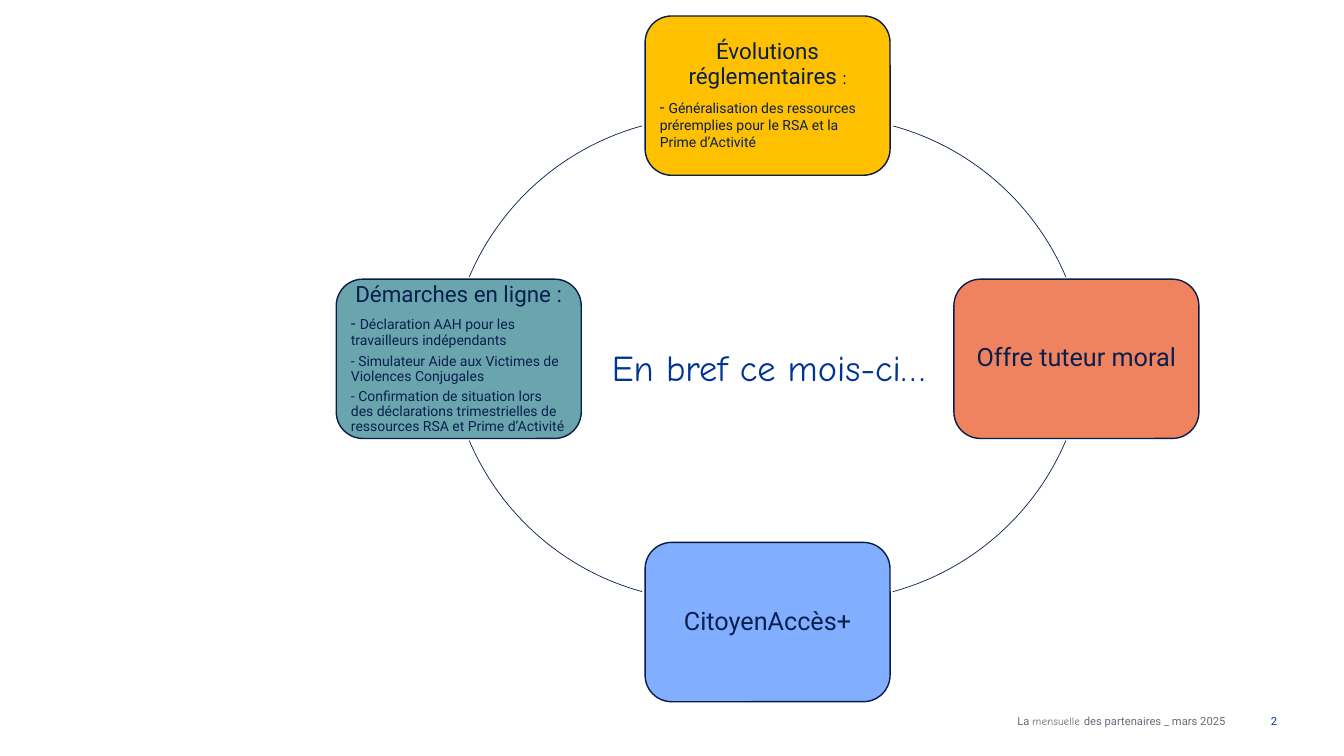
from lxml.etree import SubElement
from pptx import Presentation
from pptx.dml.color import RGBColor
from pptx.enum.shapes import MSO_SHAPE as Shape
from pptx.enum.text import MSO_ANCHOR as Anchor, MSO_AUTO_SIZE as AutoSize, PP_ALIGN as Align
from pptx.oxml.ns import qn
from pptx.util import Pt

COLORS = {
    "ink": "09204E", "border": "081D47", "title": "003593", "number": "013593",
    "footer": "646D77", "yellow": "FFC000", "orange": "E94F1C",
    "blue": "82AEFF", "teal": "2B808D",
}
BODY, ACCENT = "Roboto", "Comic Neue"

CX, CY = 548.3, 256.3            # centre of the cycle
NODE_W, NODE_H = 175, 113.8
STEP_X, STEP_Y = 220.6, 188      # centre of the cycle to centre of a node
ARC_D, ARC_DX, ARC_DY = 376, 40, 15
ARC_START, ARC_END = 23, 74.7    # degrees, in the lower right quarter


class SlideBuilder:
    def __init__(self, prs):
        self.slide = prs.slides.add_slide(prs.slide_layouts[5])

    def color(self, name):
        return RGBColor.from_string(COLORS[name])

    def frame(self, sp, anchor, margin=None):
        tf = sp.text_frame
        tf.word_wrap = True
        tf.auto_size = AutoSize.NONE
        tf.vertical_anchor = anchor
        if margin is not None:
            tf.margin_left = tf.margin_right = Pt(margin)
            tf.margin_top = tf.margin_bottom = Pt(margin)
        return tf

    def paragraph(self, p, runs, color, align, spacing=1.0, after=0):
        """Fill a paragraph from (text, size, font) runs."""
        p.alignment = align
        p.line_spacing = spacing
        p.space_before = Pt(0)
        p.space_after = Pt(after)
        for text, size, font in runs:
            r = p.add_run()
            r.text = text
            r.font.size = Pt(size)
            r.font.name = font
            r.font.color.rgb = self.color(color)

    def title(self, text, x, y, w, h):
        sp = self.slide.shapes.title
        sp.left, sp.top, sp.width, sp.height = Pt(x), Pt(y), Pt(w), Pt(h)
        tf = self.frame(sp, Anchor.BOTTOM)
        self.paragraph(tf.paragraphs[0], [(text, 26, ACCENT)], "title", Align.LEFT, 0.9)

    def label(self, runs, color, x, y, w, h):
        sp = self.slide.shapes.add_textbox(Pt(x), Pt(y), Pt(w), Pt(h))
        tf = self.frame(sp, Anchor.MIDDLE)
        self.paragraph(tf.paragraphs[0], runs, color, Align.RIGHT)

    def node(self, col, row, fill, alpha, heading, items=(), item_spacing=0.9):
        """Add a box col and row steps away from the centre of the cycle."""
        x = CX + col * STEP_X - NODE_W / 2
        y = CY + row * STEP_Y - NODE_H / 2
        sp = self.slide.shapes.add_shape(
            Shape.ROUNDED_RECTANGLE, Pt(x), Pt(y), Pt(NODE_W), Pt(NODE_H))
        sp.shadow.inherit = False
        sp.fill.solid()
        sp.fill.fore_color.rgb = self.color(fill)
        if alpha < 100:
            rgb = sp._element.spPr.find(qn("a:solidFill")).find(qn("a:srgbClr"))
            SubElement(rgb, qn("a:alpha"), val=str(alpha * 1000))
        sp.line.color.rgb = self.color("border")
        sp.line.width = Pt(1)
        tf = self.frame(sp, Anchor.MIDDLE, 5)
        self.paragraph(tf.paragraphs[0], heading, "ink", Align.CENTER, 0.9, 5.6)
        for runs in items:
            after = 0.35 * max(size for _, size, _ in runs)
            self.paragraph(tf.add_paragraph(), runs, "ink", Align.LEFT, item_spacing, after)

    def arc(self, sx, sy):
        """Add the arc of the quarter on side sx, sy of the centre."""
        x = CX + sx * ARC_DX - ARC_D / 2
        y = CY - sy * ARC_DY - ARC_D / 2
        sp = self.slide.shapes.add_shape(Shape.ARC, Pt(x), Pt(y), Pt(ARC_D), Pt(ARC_D))
        sp.shadow.inherit = False
        sp.fill.background()
        sp.line.color.rgb = self.color("ink")
        sp.line.width = Pt(0.5)
        angles = [a if sx > 0 else 180 - a for a in (ARC_START, ARC_END)]
        angles = sorted(a if sy > 0 else 360 - a for a in angles)
        for i, angle in enumerate(angles):
            sp.adjustments[i] = angle * 0.6    # 60000ths of a degree over 100000


def main():
    prs = Presentation()
    prs.slide_width, prs.slide_height = Pt(960), Pt(540)
    s = SlideBuilder(prs)

    s.label([("2", 8, BODY)], "number", 889.2, 500.4, 30.2, 28.8)
    s.label([("La ", 8, BODY), ("mensuelle ", 8, ACCENT),
             ("des partenaires _ mars 2025", 8, BODY)],
            "footer", 457.2, 500.4, 425.5, 28.8)

    for sx in (1, -1):
        for sy in (-1, 1):
            s.arc(sx, sy)

    s.node(0, -1, "yellow", 100,
           [("Évolutions réglementaires ", 16, BODY), (":", 12, BODY)],
           [[("- ", 12, BODY),
             ("Généralisation des ressources préremplies pour le RSA et la Prime d’Activité",
              10, BODY)]], 1.0)
    s.node(1, 0, "orange", 70, [("Offre tuteur moral", 18, BODY)])
    s.node(0, 1, "blue", 100, [("CitoyenAccès+", 18, BODY)])
    s.node(-1, 0, "teal", 70, [("Démarches en ligne :", 16, BODY)], [
        [("- ", 12, BODY), ("Déclaration AAH pour les travailleurs indépendants", 10, BODY)],
        [("- Simulateur Aide aux Victimes de Violences Conjugales", 10, BODY)],
        [("- Confirmation de situation lors des déclarations trimestrielles "
          "de ressources RSA et Prime d’Activité", 10, BODY)],
    ])

    s.title("En bref ce mois-ci…", 429.8, 229.7, 264.2, 51.8)
    prs.save("out.pptx")


if __name__ == "__main__":
    main()
